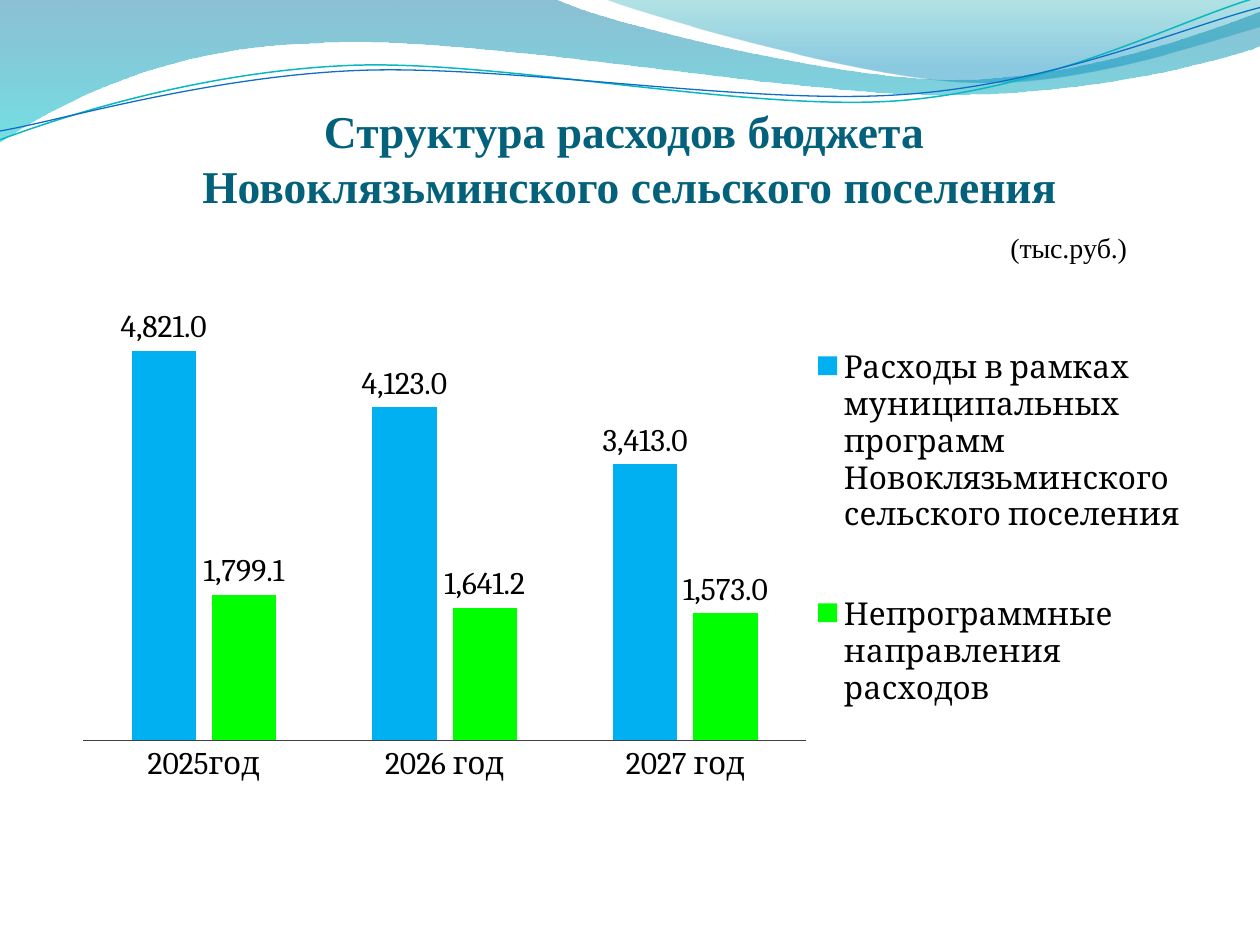
from lxml import etree
from pptx import Presentation
from pptx.chart.data import CategoryChartData
from pptx.dml.color import RGBColor
from pptx.enum.chart import XL_CHART_TYPE as ChartType, XL_LABEL_POSITION as LabelPos
from pptx.enum.chart import XL_LEGEND_POSITION as LegendPos, XL_TICK_MARK as Tick
from pptx.enum.text import MSO_ANCHOR, PP_ALIGN
from pptx.oxml import parse_xml
from pptx.oxml.ns import nsdecls, qn
from pptx.util import Inches, Pt

WIDTH, HEIGHT = 10, 7.5
BLACK, AXIS_GRAY = RGBColor(0, 0, 0), RGBColor(0x40, 0x40, 0x40)
TITLE_COLOR = RGBColor(0x04, 0x61, 0x7B)
DEEP_BLUE, TURQUOISE = RGBColor(0x00, 0x74, 0xA1), RGBColor(0x00, 0xC6, 0xCF)
TEAL, SKY = RGBColor(0x00, 0xA1, 0xA9), RGBColor(0x00, 0x8B, 0xBF)
LINE_TEAL, LINE_BLUE = RGBColor(0x0A, 0xB8, 0xBF), RGBColor(0x0F, 0x6F, 0xC6)
BAR_BLUE, BAR_GREEN = RGBColor(0x00, 0xB0, 0xF0), RGBColor(0x00, 0xFF, 0x00)

# Content
TITLE = ["Структура расходов бюджета ", "Новоклязьминского сельского поселения"]
UNITS = "(тыс.руб.)"
YEARS = ["2025год", "2026 год", "2027 год"]
SERIES = [
    ("Расходы в рамках муниципальных программ Новоклязьминского сельского поселения",
     (4821, 4123, 3413), BAR_BLUE),
    ("Непрограммные направления расходов", (1799.1, 1641.2, 1573), BAR_GREEN),
]
NUMBER_FORMAT = "#,##0.0"

# Waves: a start point, then points (2 numbers) or Bezier curves (6 numbers)
# Gradient stops: position, colour, opacity in percent
FILLED_WAVES = [
    ([(0, 0), (4.4, -0.01), (4.76, 0.17, 6.64, 0.63, 7.58, 0.63),
      (8.53, 0.63, 9.58, 0.26, 10, 0.09), (10.01, 0.36),
      (9.83, 0.44, 8.7, 0.76, 7.46, 0.75), (6.22, 0.75, 3.82, 0.28, 2.57, 0.34),
      (1.29, 0.36, 0.46, 0.83, -0.01, 1.13)],
     [(0, DEEP_BLUE, 45), (1, TURQUOISE, 55)]),
    ([(4.79, -0.01), (5.09, 0.11, 6.82, 0.62, 7.69, 0.65),
      (8.56, 0.69, 9.61, 0.32, 10, 0.21), (10, 0)],
     [(0, TEAL, 30), (0.8, SKY, 45)]),
]
LINE_WAVES = [
    ([(0, 1.11), (0.48, 0.93, 1.58, 0.57, 2.77, 0.52),
      (3.95, 0.47, 5.93, 0.89, 7.13, 0.8), (8.33, 0.71, 9.38, 0.15, 9.98, -0.02)],
     LINE_TEAL, 0.85),
    ([(0, 1.04), (0.47, 0.96, 1.64, 0.61, 2.83, 0.56),
      (4.03, 0.51, 5.97, 0.84, 7.17, 0.75), (8.36, 0.67, 9.41, 0.21, 10, 0.06)],
     LINE_BLUE, 0.75),
]


def set_all(target, **values):
    for name, value in values.items():
        setattr(target, name, value)


def add_wave(page, steps, close):
    """Draw the end points as a freeform, then bend its lines into curves."""
    ends = [(Inches(step[-2]), Inches(step[-1])) for step in steps]
    builder = page.shapes.build_freeform(*ends[0])
    builder.add_line_segments(ends[1:], close=close)
    wave = builder.convert_to_shape()
    wave.shadow.inherit = False
    lines = list(wave.element.spPr.iter(qn("a:lnTo")))
    for line, step in zip(lines, steps[1:]):
        if len(step) == 2:
            continue
        curve = etree.Element(qn("a:cubicBezTo"))
        for x, y in zip(step[::2], step[1::2]):
            point = etree.SubElement(curve, qn("a:pt"))
            point.set("x", str(Inches(x) - wave.left))
            point.set("y", str(Inches(y) - wave.top))
        line.getparent().replace(line, curve)
    return wave


def fill_gradient(shape, stops):
    shape.fill.gradient()
    shape.fill.gradient_angle = 270
    for stop, (position, color, _) in zip(shape.fill.gradient_stops, stops):
        stop.position = position
        stop.color.rgb = color
    tags = shape.element.spPr.iter(qn("a:srgbClr"))
    for tag, (_, _, opacity) in zip(tags, stops):
        etree.SubElement(tag, qn("a:alpha")).set("val", str(opacity * 1000))


def place(element, inner=False, **percents):
    """Give a chart part a manual layout in percent of the chart's size."""
    for old in element.findall(qn("c:layout")):
        element.remove(old)
    target = '<c:layoutTarget val="inner"/>' if inner else ""
    modes = "".join(f'<c:{key}Mode val="edge"/>' for key in ("x", "y"))
    sizes = "".join(f'<c:{key} val="{value / 100}"/>' for key, value in percents.items())
    layout = parse_xml(f'<c:layout {nsdecls("c")}><c:manualLayout>{target}{modes}{sizes}'
                       "</c:manualLayout></c:layout>")
    before = element.find(qn("c:tx"))
    if before is None:
        before = element.find(qn("c:legendPos"))
    if before is None:
        element.insert(0, layout)
    else:
        before.addnext(layout)


def add_title(page):
    box = page.shapes.add_textbox(Inches(0.5), Inches(0.77), Inches(9), Inches(1.25))
    frame = box.text_frame
    set_all(frame, word_wrap=True, vertical_anchor=MSO_ANCHOR.TOP, margin_left=0,
            margin_right=0, margin_top=Inches(0.05), margin_bottom=0)
    para = frame.paragraphs[0]
    para.alignment = PP_ALIGN.CENTER
    for i, line in enumerate(TITLE):
        if i:
            para.add_line_break()
        span = para.add_run()
        span.text = line
        set_all(span.font, name="Times New Roman", size=Pt(26), bold=True)
        span.font.color.rgb = TITLE_COLOR


def add_spending_chart(page):
    data = CategoryChartData(number_format=NUMBER_FORMAT)
    data.categories = YEARS
    for name, values, _ in SERIES:
        data.add_series(name, values)
    chart = page.shapes.add_chart(ChartType.COLUMN_CLUSTERED, Inches(0.51), Inches(1.7),
                                  Inches(9), Inches(4.8), data).chart
    set_all(chart.font, name="Cambria", size=Pt(18))
    chart.font.color.rgb = BLACK

    # Units as the chart title
    chart.has_title = True
    frame = chart.chart_title.text_frame
    frame.text = UNITS
    font = frame.paragraphs[0].runs[0].font
    set_all(font, name="Times New Roman", size=Pt(16), bold=False)
    font.color.rgb = BLACK
    chart.chart_title.include_in_layout = False
    place(chart.chart_title._element, x=83, y=1.8)

    # Legend
    chart.has_legend = True
    set_all(chart.legend, position=LegendPos.TOP, include_in_layout=False)
    place(chart.legend._element, x=65.4, y=12, w=34, h=80)

    # Axes
    set_all(chart.value_axis, visible=False, has_major_gridlines=False,
            minimum_scale=0, maximum_scale=6000)
    set_all(chart.category_axis, major_tick_mark=Tick.NONE, minor_tick_mark=Tick.NONE)
    chart.category_axis.format.line.color.rgb = AXIS_GRAY
    chart.category_axis.format.line.width = Pt(0.75)

    # Columns and their labels
    plot = chart.plots[0]
    set_all(plot, gap_width=150, overlap=-25, vary_by_categories=False)
    for series, (_, _, color) in zip(plot.series, SERIES):
        series.format.fill.solid()
        series.format.fill.fore_color.rgb = color
        set_all(series.data_labels, show_value=True, number_format=NUMBER_FORMAT,
                number_format_is_linked=False, position=LabelPos.OUTSIDE_END)
    area = chart._chartSpace.find(".//" + qn("c:plotArea"))
    place(area, inner=True, x=1.7, y=6.8, w=63.7, h=80.2)


def main():
    deck = Presentation()
    set_all(deck, slide_width=Inches(WIDTH), slide_height=Inches(HEIGHT))
    page = deck.slides.add_slide(deck.slide_layouts[6])

    # Decorative waves along the top
    for steps, stops in FILLED_WAVES:
        wave = add_wave(page, steps, close=True)
        fill_gradient(wave, stops)
        wave.line.fill.background()
    for steps, color, width in LINE_WAVES:
        wave = add_wave(page, steps, close=False)
        wave.fill.background()
        wave.line.color.rgb = color
        wave.line.width = Pt(width)

    add_title(page)
    add_spending_chart(page)
    deck.save("out.pptx")


if __name__ == "__main__":
    main()
